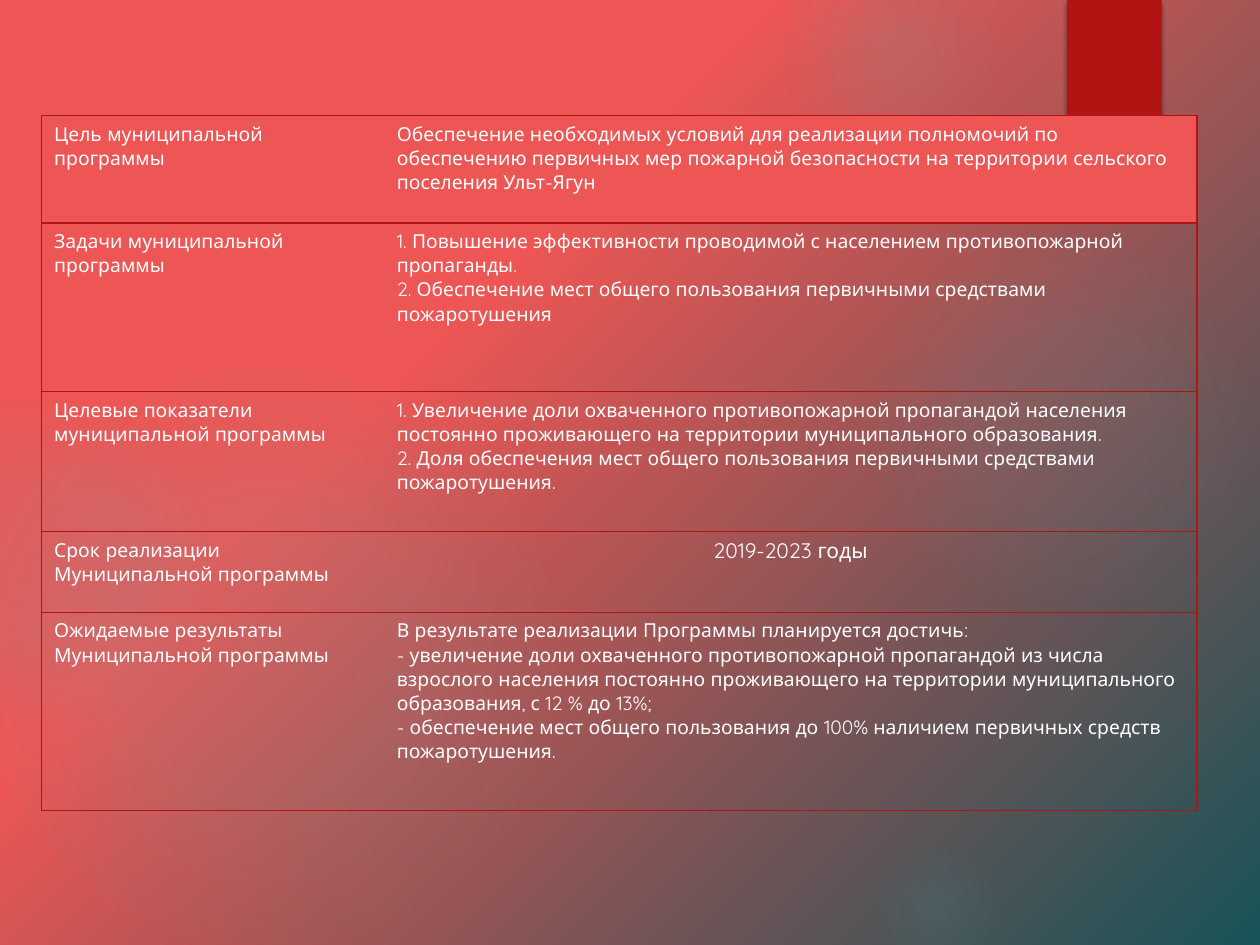
import pptx
import pptx.dml.color
import pptx.enum.shapes
import pptx.enum.text
import pptx.oxml
import pptx.oxml.ns
import pptx.util

COLORS = {"coral": "ED5654", "teal": "185358", "glow": "50B9C1",
          "red": "B01513", "white": "FFFFFF", "black": "000000"}
FONT = "Quicksand"
WIDTH, HEIGHT = 10, 7.5
NAMESPACE = pptx.oxml.ns.nsdecls("a")

# Glows: left, top, diameter, then (position, opacity) stops in percent
GLOWS = [
    (6.89, 1.83, 3.08, [(0, 7), (36, 6), (69, 0)]),
    (6.22, -0.5, 1.75, [(0, 14), (36, 7), (73, 0)]),
    (6.89, 6.67, 1.08, [(0, 9), (36, 5), (66, 0)]),
    (-0.17, 2.92, 4.58, [(0, 11), (36, 10), (75, 0)]),
    (-0.92, 3.17, 2.58, [(0, 8), (36, 8), (72, 0)]),
]

COLUMN_WIDTHS = [2.72, 6.45]

# Programme passport: row height, label paragraphs, content paragraphs
ROWS = [
    (0.85, ["Цель муниципальной программы"],
     ["Обеспечение необходимых условий для реализации полномочий по обеспечению "
      "первичных мер пожарной безопасности на территории сельского поселения Ульт-Ягун"]),
    (1.34, ["Задачи муниципальной программы"],
     ["1. Повышение эффективности проводимой с населением противопожарной пропаганды.",
      "2. Обеспечение мест общего пользования первичными средствами пожаротушения"]),
    (1.11, ["Целевые показатели", "муниципальной программы"],
     ["1. Увеличение доли охваченного противопожарной пропагандой населения постоянно "
      "проживающего на территории муниципального образования.",
      "2. Доля обеспечения мест общего пользования первичными средствами пожаротушения."]),
    (0.64, ["Срок реализации", "Муниципальной программы"], ["2019-2023 годы"]),
    (1.57, ["Ожидаемые результаты", "Муниципальной программы"],
     ["В результате реализации Программы планируется достичь:",
      "- увеличение доли охваченного противопожарной пропагандой из числа взрослого "
      "населения постоянно проживающего на территории муниципального образования, "
      "с 12 % до 13%;",
      "- обеспечение мест общего пользования до 100% наличием первичных средств "
      "пожаротушения."]),
]
TERM_ROW = 3


def color(name):
    return pptx.dml.color.RGBColor.from_string(COLORS[name])


def paint_background(slide):
    fill = slide.background.fill
    fill.gradient()
    fill.gradient_angle = 315
    for stop, position, name in zip(fill.gradient_stops, (0.35, 1), ("coral", "teal")):
        stop.position = position
        stop.color.rgb = color(name)


def add_plain_shape(slide, kind, box):
    shape = slide.shapes.add_shape(kind, *map(pptx.util.Inches, box))
    shape.shadow.inherit = False
    shape.line.fill.background()
    return shape


def add_glow(slide, left, top, diameter, stops):
    shape = add_plain_shape(slide, pptx.enum.shapes.MSO_SHAPE.OVAL,
                            (left, top, diameter, diameter))
    stop_xml = "".join(
        f'<a:gs pos="{position * 1000}"><a:srgbClr val="{COLORS["glow"]}">'
        f'<a:alpha val="{opacity * 1000}"/></a:srgbClr></a:gs>'
        for position, opacity in stops)
    gradient = pptx.oxml.parse_xml(
        f'<a:gradFill {NAMESPACE} rotWithShape="1"><a:gsLst>{stop_xml}</a:gsLst>'
        '<a:path path="circle"><a:fillToRect l="50000" t="50000" r="50000" b="50000"/>'
        '</a:path></a:gradFill>')
    properties = shape._element.spPr
    properties.find(pptx.oxml.ns.qn("a:prstGeom")).addnext(gradient)


def add_ribbon(slide, box):
    shape = add_plain_shape(slide, pptx.enum.shapes.MSO_SHAPE.RECTANGLE, box)
    shape.fill.solid()
    shape.fill.fore_color.rgb = color("red")
    effects = shape._element.spPr.find(pptx.oxml.ns.qn("a:effectLst"))
    effects.append(pptx.oxml.parse_xml(
        f'<a:outerShdw {NAMESPACE} blurRad="{pptx.util.Pt(3)}" dist="{pptx.util.Pt(2)}" '
        f'dir="5400000" rotWithShape="0"><a:srgbClr val="{COLORS["black"]}">'
        '<a:alpha val="45000"/></a:srgbClr></a:outerShdw>'))


def set_borders(cell, visible):
    properties = cell._tc.get_or_add_tcPr()
    for side in "LRTB":
        fill = (f'<a:solidFill><a:srgbClr val="{COLORS["red"]}"/></a:solidFill>'
                if side in visible else "<a:noFill/>")
        properties.append(pptx.oxml.parse_xml(
            f'<a:ln{side} {NAMESPACE} w="{pptx.util.Pt(0.75)}">{fill}</a:ln{side}>'))


def write_text(frame, lines, size=11, align=pptx.enum.text.PP_ALIGN.LEFT):
    for index, line in enumerate(lines):
        paragraph = frame.add_paragraph() if index else frame.paragraphs[0]
        paragraph.alignment = align
        run = paragraph.add_run()
        run.text = line
        run.font.name = FONT
        run.font.size = pptx.util.Pt(size)
        run.font.color.rgb = color("white")


def add_passport_table(slide, left, top):
    height = sum(row[0] for row in ROWS)
    table = slide.shapes.add_table(
        len(ROWS), len(COLUMN_WIDTHS),
        *map(pptx.util.Inches, (left, top, sum(COLUMN_WIDTHS), height))).table
    table.first_row = table.horz_banding = False
    for column, width in zip(table.columns, COLUMN_WIDTHS):
        column.width = pptx.util.Inches(width)
    for row_index, (row_height, *texts) in enumerate(ROWS):
        table.rows[row_index].height = pptx.util.Inches(row_height)
        for column_index, lines in enumerate(texts):
            cell = table.cell(row_index, column_index)
            # Horizontal rules everywhere, vertical rules on the outside only
            set_borders(cell, "TB" + "LR"[column_index])
            if row_index == 0:
                cell.fill.solid()
                cell.fill.fore_color.rgb = color("coral")
            else:
                cell.fill.background()
            if (row_index, column_index) == (TERM_ROW, 1):
                write_text(cell.text_frame, lines, size=12,
                           align=pptx.enum.text.PP_ALIGN.CENTER)
            else:
                write_text(cell.text_frame, lines)


def main():
    presentation = pptx.Presentation()
    presentation.slide_width = pptx.util.Inches(WIDTH)
    presentation.slide_height = pptx.util.Inches(HEIGHT)
    slide = presentation.slides.add_slide(presentation.slide_layouts[6])

    # Backdrop
    paint_background(slide)
    for glow in GLOWS:
        add_glow(slide, *glow)
    add_ribbon(slide, (8.47, 0, 0.75, 1.2))

    # Programme passport
    add_passport_table(slide, left=0.33, top=0.92)
    presentation.save("out.pptx")


if __name__ == "__main__":
    main()
